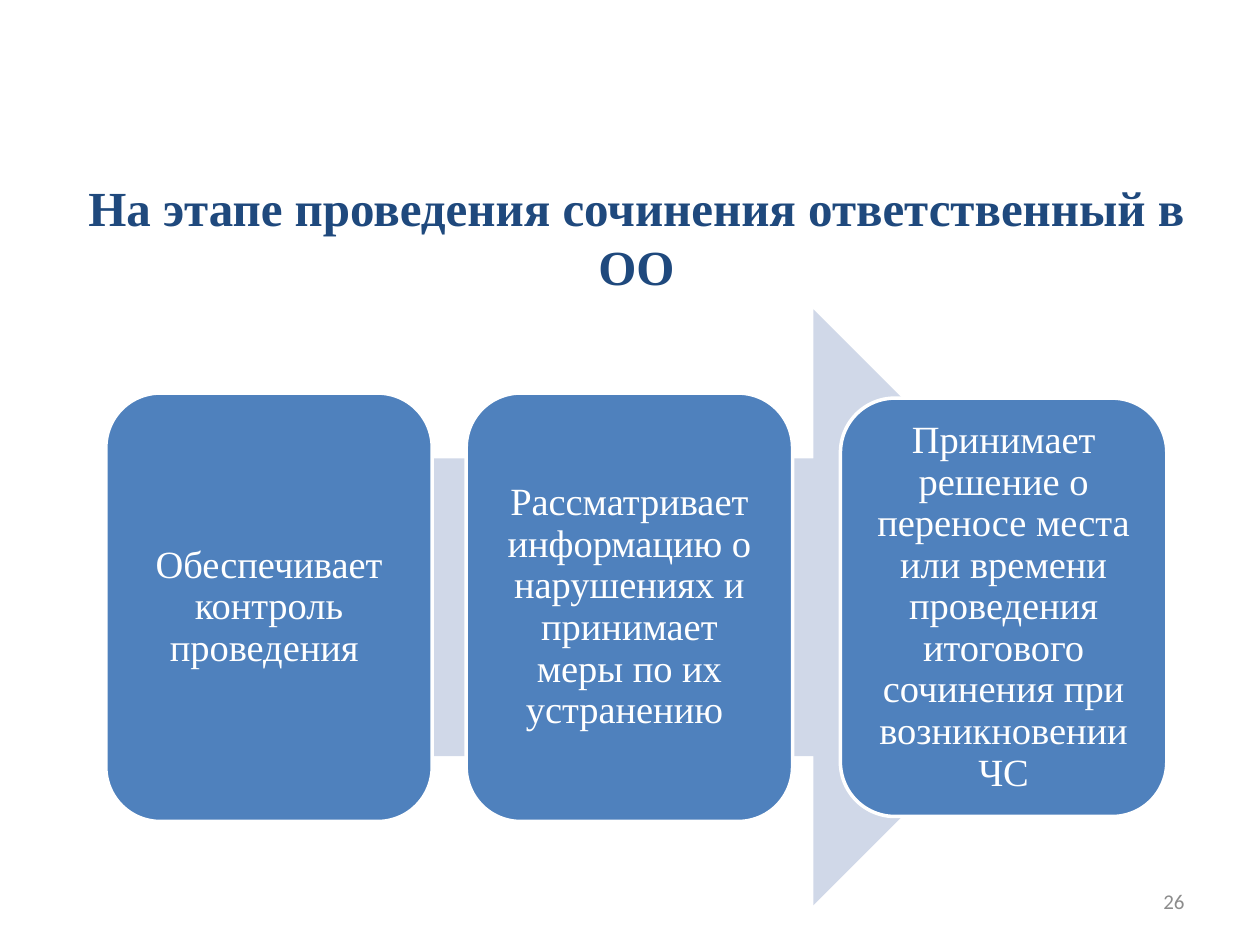
from pptx import Presentation
from pptx.dml.color import RGBColor
from pptx.enum import shapes, text
from pptx.util import Inches, Pt

SERIF, SANS = "Times New Roman", "Calibri"
NAVY, BLUE, PALE, WHITE, GREY = "1F497D", "4F81BD", "D0D8E8", "FFFFFF", "8C8C8C"
WIDTH, HEIGHT = 10, 7.5


def color(hex_value):
    return RGBColor.from_string(hex_value)


class ProcessSlide:
    """Holds the slide and its style; boxes are shares of the slide's size."""

    def __init__(self, deck):
        self.slide = deck.slides.add_slide(deck.slide_layouts[5])

    def frame(self, x, y, w, h):
        return (Inches(x * WIDTH), Inches(y * HEIGHT),
                Inches(w * WIDTH), Inches(h * HEIGHT))

    def set_words(self, shape, words, size, ink, font=SERIF, bold=False,
                  align=text.PP_ALIGN.CENTER, spacing=None):
        body = shape.text_frame
        body.text = words
        body.word_wrap = True
        body.vertical_anchor = text.MSO_ANCHOR.MIDDLE
        paragraph = body.paragraphs[0]
        paragraph.alignment = align
        if spacing:
            paragraph.line_spacing = spacing
        style = paragraph.runs[0].font
        style.name, style.size, style.bold = font, Pt(size), bold
        style.color.rgb = color(ink)

    def title(self, words, *box):
        heading = self.slide.shapes.title
        heading.left, heading.top, heading.width, heading.height = self.frame(*box)
        self.set_words(heading, words, 28, NAVY, bold=True)

    def block(self, kind, fill, *box):
        block = self.slide.shapes.add_shape(kind, *self.frame(*box))
        block.shadow.inherit = False
        block.fill.solid()
        block.fill.fore_color.rgb = color(fill)
        block.line.fill.background()
        return block

    def arrow(self, *box):
        self.block(shapes.MSO_SHAPE.RIGHT_ARROW, PALE, *box)

    def step(self, words, *box):
        card = self.block(shapes.MSO_SHAPE.ROUNDED_RECTANGLE, BLUE, *box)
        card.line.color.rgb = color(WHITE)
        card.line.width = Pt(2)
        body = card.text_frame
        body.margin_left = body.margin_right = Inches(0.09)
        body.margin_top = body.margin_bottom = Inches(0.09)
        self.set_words(card, words, 22, WHITE, spacing=0.9)

    def page_number(self, number, *box):
        label = self.slide.shapes.add_textbox(*self.frame(*box))
        self.set_words(label, number, 12, GREY, SANS, align=text.PP_ALIGN.RIGHT)


def main():
    deck = Presentation()
    deck.slide_width, deck.slide_height = Inches(WIDTH), Inches(HEIGHT)
    page = ProcessSlide(deck)

    # Heading and page number
    page.title("На этапе проведения сочинения ответственный в ОО",
               0.055, 1 / 6, 0.9, 1 / 6)
    page.page_number("26", 0.72, 6.95 / HEIGHT, 0.23, 0.4 / HEIGHT)

    # Arrow behind the steps
    middle = 4.82 / HEIGHT
    arrow_height = 4.73 / HEIGHT
    page.arrow(1.17 / WIDTH, middle - arrow_height / 2, 7.65 / WIDTH, arrow_height)

    # Steps: left edge and height in inches, all centred on the arrow's axis
    steps = [
        (0.84, 3.4, "Обеспечивает контроль проведения "),
        (3.7, 3.4, "Рассматривает информацию о нарушениях и принимает "
                   "меры по их устранению "),
        (6.67, 3.32, "Принимает решение о переносе места или времени проведения "
                     "итогового сочинения при возникновении ЧС"),
    ]
    for left, height, words in steps:
        share = height / HEIGHT
        page.step(words, left / WIDTH, middle - share / 2, 2.59 / WIDTH, share)

    deck.save("out.pptx")


if __name__ == "__main__":
    main()
